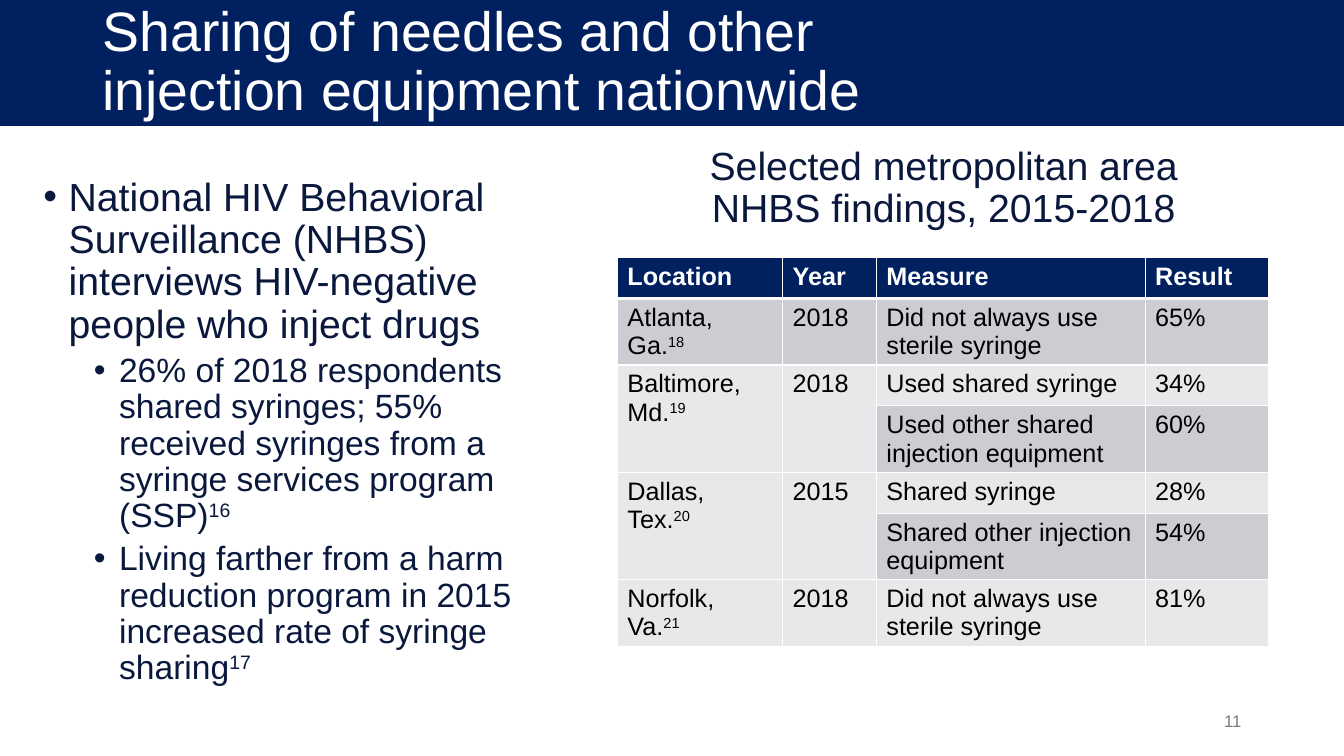
from dataclasses import dataclass

from lxml import etree
from pptx import Presentation
from pptx.dml.color import RGBColor
from pptx.enum.shapes import MSO_SHAPE
from pptx.enum.text import MSO_ANCHOR, MSO_AUTO_SIZE, PP_ALIGN
from pptx.oxml.ns import qn
from pptx.util import Pt

RECTANGLE = MSO_SHAPE.RECTANGLE
TOP, MIDDLE = MSO_ANCHOR.TOP, MSO_ANCHOR.MIDDLE
LEFT, CENTER, RIGHT = PP_ALIGN.LEFT, PP_ALIGN.CENTER, PP_ALIGN.RIGHT
NO_AUTOFIT = MSO_AUTO_SIZE.NONE

COLORS = {
    "navy": "002060",
    "ink": "09183C",
    "white": "FFFFFF",
    "black": "000000",
    "dark_band": "CCCDD2",
    "light_band": "E7E8EA",
    "gray": "797979",
}
FONT = "Arial"
SLIDE_WIDTH, SLIDE_HEIGHT, BAND_HEIGHT = 960, 540, 90
HEADERS = ("Location", "Year", "Measure", "Result")
COLUMN_WIDTHS = (118, 67, 192, 88)
ROW_HEIGHT = 29.2


@dataclass
class Point:
    text: str
    size: float
    indent: float
    before: float


@dataclass
class Finding:
    location: str
    year: str
    measures: tuple[tuple[str, str], ...]


POINTS = (
    Point("National HIV Behavioral Surveillance (NHBS) interviews HIV-negative "
          "people who inject drugs", 28, 18, 0),
    Point("26% of 2018 respondents shared syringes; 55% received syringes from a "
          "syringe services program (SSP)^16", 24, 54, 5),
    Point("Living farther from a harm reduction program in 2015 increased rate of "
          "syringe sharing^17", 24, 54, 5),
)
FINDINGS = (
    Finding("Atlanta, Ga.^18", "2018",
            (("Did not always use sterile syringe", "65%"),)),
    Finding("Baltimore, Md.^19", "2018",
            (("Used shared syringe", "34%"),
             ("Used other shared injection equipment", "60%"))),
    Finding("Dallas, Tex.^20", "2015",
            (("Shared syringe", "28%"),
             ("Shared other injection equipment", "54%"))),
    Finding("Norfolk, Va.^21", "2018",
            (("Did not always use sterile syringe", "81%"),)),
)


def rgb(name: str) -> RGBColor:
    return RGBColor.from_string(COLORS[name])


def write(paragraph, text: str, *, size: float, color: str, bold: bool = False,
          align=LEFT, spacing: float = 1.0, before: float = 0) -> None:
    paragraph.alignment = align
    paragraph.line_spacing = spacing
    paragraph.space_before = Pt(before)
    body, _, reference = text.partition("^")
    for part, raised in ((body, False), (reference, True)):
        if not part:
            continue
        run = paragraph.add_run()
        run.text = part
        run.font.name = FONT
        run.font.size = Pt(size)
        run.font.bold = bold
        run.font.color.rgb = rgb(color)
        if raised:
            run._r.get_or_add_rPr().set("baseline", "30000")


def add_bullet(paragraph, indent: float) -> None:
    properties = paragraph._p.get_or_add_pPr()
    properties.set("marL", str(Pt(indent)))
    properties.set("indent", str(-Pt(18)))
    etree.SubElement(properties, qn("a:buFont")).set("typeface", FONT)
    etree.SubElement(properties, qn("a:buChar")).set("char", "•")


def add_frame(slide, left: float, top: float, width: float, height: float, anchor=TOP):
    frame = slide.shapes.add_textbox(Pt(left), Pt(top), Pt(width), Pt(height)).text_frame
    frame.word_wrap = True
    frame.auto_size = NO_AUTOFIT
    frame.vertical_anchor = anchor
    return frame


def add_title(slide) -> None:
    title = slide.shapes.title
    title.left, title.top, title.width, title.height = (
        Pt(66), Pt(0), Pt(608), Pt(BAND_HEIGHT))
    frame = title.text_frame
    frame.word_wrap = True
    frame.auto_size = NO_AUTOFIT
    frame.vertical_anchor = MIDDLE
    write(frame.paragraphs[0], "Sharing of needles and other injection equipment nationwide",
          size=39.6, color="white", spacing=0.9)

    band = slide.shapes.add_shape(RECTANGLE, Pt(0), Pt(0), Pt(SLIDE_WIDTH), Pt(BAND_HEIGHT))
    band.shadow.inherit = False
    band.fill.solid()
    band.fill.fore_color.rgb = rgb("navy")
    band.line.fill.background()
    title._element.addprevious(band._element)


def add_points(slide) -> None:
    frame = add_frame(slide, 24, 123, 380, 397)
    for index, point in enumerate(POINTS):
        paragraph = frame.add_paragraph() if index else frame.paragraphs[0]
        add_bullet(paragraph, point.indent)
        write(paragraph, point.text, size=point.size, color="ink",
              spacing=0.9, before=point.before)


def format_cell(cell, row: int) -> None:
    properties = cell._tc.get_or_add_tcPr()
    for side in "LRTB":
        thick = (row, side) in ((0, "B"), (1, "T"))
        border = etree.SubElement(properties, qn(f"a:ln{side}"), w=str(Pt(3 if thick else 1)))
        fill = etree.SubElement(border, qn("a:solidFill"))
        etree.SubElement(fill, qn("a:srgbClr"), val=COLORS["white"])
    cell.fill.solid()
    band = "dark_band" if row % 2 else "light_band"
    cell.fill.fore_color.rgb = rgb(band if row else "navy")


def add_findings(slide) -> None:
    row_count = 1 + sum(len(finding.measures) for finding in FINDINGS)
    table = slide.shapes.add_table(row_count, len(HEADERS), Pt(441), Pt(184),
                                   Pt(sum(COLUMN_WIDTHS)), Pt(ROW_HEIGHT * row_count)).table
    for column, width in zip(table.columns, COLUMN_WIDTHS):
        column.width = Pt(width)
    for row in range(row_count):
        for column in range(len(HEADERS)):
            format_cell(table.cell(row, column), row)

    def write_cell(row: int, column: int, text: str) -> None:
        write(table.cell(row, column).text_frame.paragraphs[0], text, size=18,
              color="black" if row else "white", bold=row == 0)

    for column, header in enumerate(HEADERS):
        write_cell(0, column, header)
    row = 1
    for finding in FINDINGS:
        last_row = row + len(finding.measures) - 1
        for column, text in enumerate((finding.location, finding.year)):
            if last_row > row:
                table.cell(row, column).merge(table.cell(last_row, column))
            write_cell(row, column, text)
        for measure, result in finding.measures:
            write_cell(row, 2, measure)
            write_cell(row, 3, result)
            row += 1


def main() -> None:
    deck = Presentation()
    deck.slide_width, deck.slide_height = Pt(SLIDE_WIDTH), Pt(SLIDE_HEIGHT)
    slide = deck.slides.add_slide(deck.slide_layouts[5])
    add_title(slide)
    add_points(slide)
    add_findings(slide)
    heading = add_frame(slide, 484, 101, 380, 72)
    write(heading.paragraphs[0], "Selected metropolitan area NHBS findings, 2015-2018",
          size=28, color="ink", align=CENTER, spacing=0.9)
    page_number = add_frame(slide, 678, 500.5, 216, 28.8, MIDDLE)
    write(page_number.paragraphs[0], "11", size=12, color="gray", align=RIGHT)
    deck.save("out.pptx")


if __name__ == "__main__":
    main()
